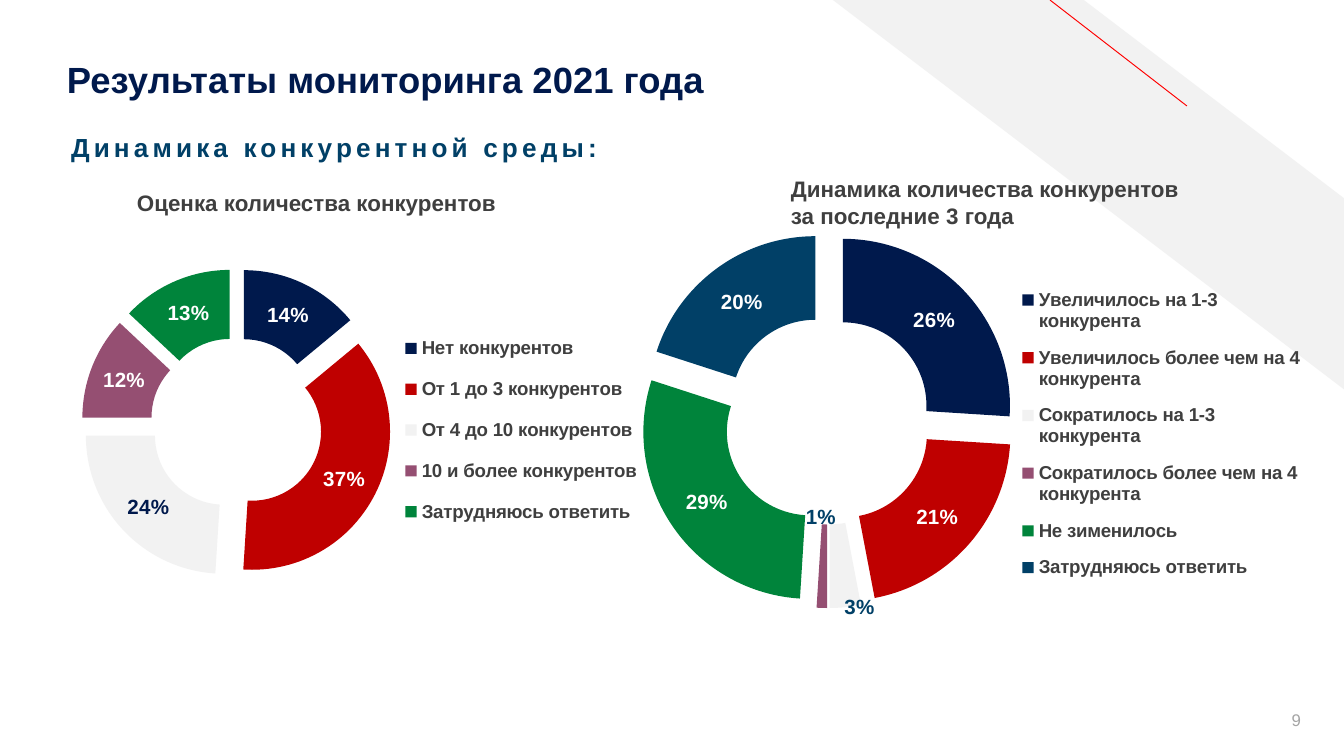
"""Build the slide on the 2021 monitoring results with two exploded doughnut charts."""
from dataclasses import dataclass
from typing import NamedTuple

from pptx import Presentation
from pptx.chart.data import CategoryChartData
from pptx.dml.color import RGBColor
from pptx.enum.chart import XL_CHART_TYPE, XL_LEGEND_POSITION
from pptx.enum.shapes import MSO_CONNECTOR, MSO_SHAPE
from pptx.enum.text import MSO_ANCHOR, PP_ALIGN
from pptx.oxml import parse_xml
from pptx.oxml.ns import nsdecls, qn
from pptx.util import Emu, Pt

DOUGHNUT = XL_CHART_TYPE.DOUGHNUT_EXPLODED
LEGEND_RIGHT = XL_LEGEND_POSITION.RIGHT
STRAIGHT = MSO_CONNECTOR.STRAIGHT
STRIPE = MSO_SHAPE.DIAGONAL_STRIPE
TOP, MIDDLE, BOTTOM = MSO_ANCHOR.TOP, MSO_ANCHOR.MIDDLE, MSO_ANCHOR.BOTTOM
LEFT, RIGHT = PP_ALIGN.LEFT, PP_ALIGN.RIGHT
EMU_PER_PX = 914400 / 134.4


@dataclass(frozen=True)
class Theme:
    font: str = "Arial"
    navy: str = "00194C"
    red: str = "BF0000"
    pale: str = "F2F2F2"
    plum: str = "954F72"
    green: str = "00843B"
    teal: str = "014067"
    text: str = "3F3F3F"
    muted: str = "A5A5A5"
    white: str = "FFFFFF"
    accent: str = "FF0000"
    title_pt: float = 19.5
    subtitle_pt: float = 14
    heading_pt: float = 12
    label_pt: float = 11
    legend_pt: float = 10
    number_pt: float = 9


THEME = Theme()
SLICE_COLORS = (THEME.navy, THEME.red, THEME.pale, THEME.plum, THEME.green, THEME.teal)


class Box(NamedTuple):
    x: int
    y: int
    w: int
    h: int


class Insets(NamedTuple):
    left: int = 13
    top: int = 7
    right: int = 13
    bottom: int = 7


@dataclass(frozen=True)
class Label:
    text: str
    box: Box
    size: float
    color: str
    bold: bool = True
    align: PP_ALIGN = LEFT
    anchor: MSO_ANCHOR = TOP
    insets: Insets = Insets()
    wrap: bool = False
    spacing: int = 0
    line_spacing: float = 1.0


class DarkLabel(NamedTuple):
    index: int
    color: str
    dx: int = 0
    dy: int = 0


@dataclass(frozen=True)
class Doughnut:
    box: Box
    plot: Box
    legend: Box
    slices: dict[str, int]
    dark_labels: tuple[DarkLabel, ...]


TIGHT = Insets(9, 5, 9, 5)
LABELS = (
    Label("9", Box(1228, 700, 82, 40), THEME.number_pt, THEME.muted, bold=False,
          align=RIGHT, anchor=MIDDLE, insets=TIGHT, wrap=True),
    Label("Результаты мониторинга 2021 года", Box(58, 52, 704, 49), THEME.title_pt,
          THEME.navy, anchor=BOTTOM, insets=Insets(9, 5, 9, 0), wrap=True, line_spacing=0.9),
    Label("Динамика количества конкурентов за последние 3 года", Box(782, 170, 414, 64),
          THEME.heading_pt, THEME.text, insets=TIGHT, wrap=True),
    Label("Оценка количества конкурентов", Box(124, 182, 392, 41), THEME.heading_pt, THEME.text),
    Label("Динамика конкурентной среды:", Box(58, 124, 564, 46), THEME.subtitle_pt,
          THEME.teal, spacing=220),
)
DOUGHNUTS = (
    Doughnut(
        Box(42, 214, 613, 415), Box(81, 265, 311, 318), Box(398, 318, 246, 224),
        {"Нет конкурентов": 14, "От 1 до 3 конкурентов": 37, "От 4 до 10 конкурентов": 24,
         "10 и более конкурентов": 12, "Затрудняюсь ответить": 13},
        (DarkLabel(2, THEME.navy),)),
    Doughnut(
        Box(618, 202, 704, 433), Box(640, 230, 376, 380), Box(1020, 274, 282, 320),
        {"Увеличилось на 1-3 конкурента": 26, "Увеличилось более чем на 4 конкурента": 21,
         "Сократилось на 1-3 конкурента": 3, "Сократилось более чем на 4 конкурента": 1,
         "Не зименилось": 29, "Затрудняюсь ответить": 20},
        (DarkLabel(2, THEME.teal, 18, 41), DarkLabel(3, THEME.teal, -2, -50))),
)


def px(n: int) -> Emu:
    return Emu(round(n * EMU_PER_PX))


def rgb(value: str) -> RGBColor:
    return RGBColor.from_string(value)


def set_font(font, size: float, color: str, bold: bool = True) -> None:
    font.name, font.size, font.bold = THEME.font, Pt(size), bold
    font.color.rgb = rgb(color)


def add_label(slide, label: Label) -> None:
    sp = slide.shapes.add_textbox(*map(px, label.box))
    tf = sp.text_frame
    tf.word_wrap, tf.vertical_anchor = label.wrap, label.anchor
    tf.margin_left, tf.margin_top, tf.margin_right, tf.margin_bottom = map(px, label.insets)
    p = tf.paragraphs[0]
    p.text, p.alignment, p.line_spacing = label.text, label.align, label.line_spacing
    set_font(p.font, label.size, label.color, label.bold)
    if label.spacing:
        sp.element.xpath(".//a:defRPr")[0].set("spc", str(label.spacing))


def set_layout(parent, index: int, **values: str | float) -> None:
    for old in parent.findall(qn("c:layout")):
        parent.remove(old)
    parts = "".join(f'<c:{tag} val="{value}"/>' for tag, value in values.items())
    parent.insert(index, parse_xml(
        f'<c:layout {nsdecls("c")}><c:manualLayout>{parts}</c:manualLayout></c:layout>'))


def place(parent, index: int, outer: Box, inner: Box, **target: str) -> None:
    set_layout(parent, index, **target, xMode="edge", yMode="edge",
               x=round((inner.x - outer.x) / outer.w, 3),
               y=round((inner.y - outer.y) / outer.h, 3),
               w=round(inner.w / outer.w, 3), h=round(inner.h / outer.h, 3))


def add_doughnut(slide, spec: Doughnut) -> None:
    data = CategoryChartData()
    data.categories = list(spec.slices)
    data.add_series("Series 1", list(spec.slices.values()))
    chart = slide.shapes.add_chart(DOUGHNUT, *map(px, spec.box), data).chart
    chart.has_title = False
    set_font(chart.font, THEME.legend_pt, THEME.text, bold=False)
    chart.has_legend = True
    legend = chart.legend
    legend.position, legend.include_in_layout = LEGEND_RIGHT, False
    set_font(legend.font, THEME.legend_pt, THEME.text)
    plot = chart.plots[0]
    plot.vary_by_categories = True
    series = plot.series[0]
    for i, color in enumerate(SLICE_COLORS[:len(spec.slices)]):
        fill = series.points[i].format.fill
        fill.solid()
        fill.fore_color.rgb = rgb(color)
    labels = series.data_labels
    labels.show_percentage, labels.show_value = True, False
    labels.number_format, labels.number_format_is_linked = "0%", False
    set_font(labels.font, THEME.label_pt, THEME.white)
    for dark in spec.dark_labels:
        set_font(series.points[dark.index].data_label.font, THEME.label_pt, dark.color)
        d_lbl = chart.element.xpath(f".//c:dLbl[c:idx/@val={dark.index}]")[0]
        d_lbl.find(qn("c:showVal")).set("val", "0")
        d_lbl.find(qn("c:showPercent")).set("val", "1")
        if dark.dx or dark.dy:
            set_layout(d_lbl, 1, x=round(dark.dx / spec.box.w, 3), y=round(dark.dy / spec.box.h, 3))
    place(chart.element.xpath(".//c:plotArea")[0], 0, spec.box, spec.plot, layoutTarget="inner")
    place(chart.element.xpath(".//c:legend")[0], 1, spec.box, spec.legend)
    chart.element.find(qn("c:chart")).addnext(parse_xml(
        f'<c:spPr {nsdecls("c", "a")}><a:noFill/><a:ln><a:noFill/></a:ln></c:spPr>'))


def add_corner(slide) -> None:
    sp = slide.shapes.add_shape(STRIPE, *map(px, Box(833, 0, 512, 390)))
    sp.adjustments[0] = 0.51
    sp.shadow.inherit = False
    sp.fill.solid()
    sp.fill.fore_color.rgb = rgb(THEME.pale)
    sp.line.fill.background()
    sp.element.spPr.xfrm.set("flipH", "1")
    line = slide.shapes.add_connector(STRAIGHT, px(1187), px(106), px(1050), px(0))
    line.line.color.rgb, line.line.width = rgb(THEME.accent), Pt(0.5)
    line.element.spPr.append(parse_xml(f'<a:effectLst {nsdecls("a")}/>'))


def main() -> None:
    prs = Presentation()
    prs.slide_width, prs.slide_height = px(1344), px(756)
    slide = prs.slides.add_slide(prs.slide_layouts[6])
    add_corner(slide)
    for label in LABELS:
        add_label(slide, label)
    for doughnut in DOUGHNUTS:
        add_doughnut(slide, doughnut)
    prs.save("out.pptx")


if __name__ == "__main__":
    main()
